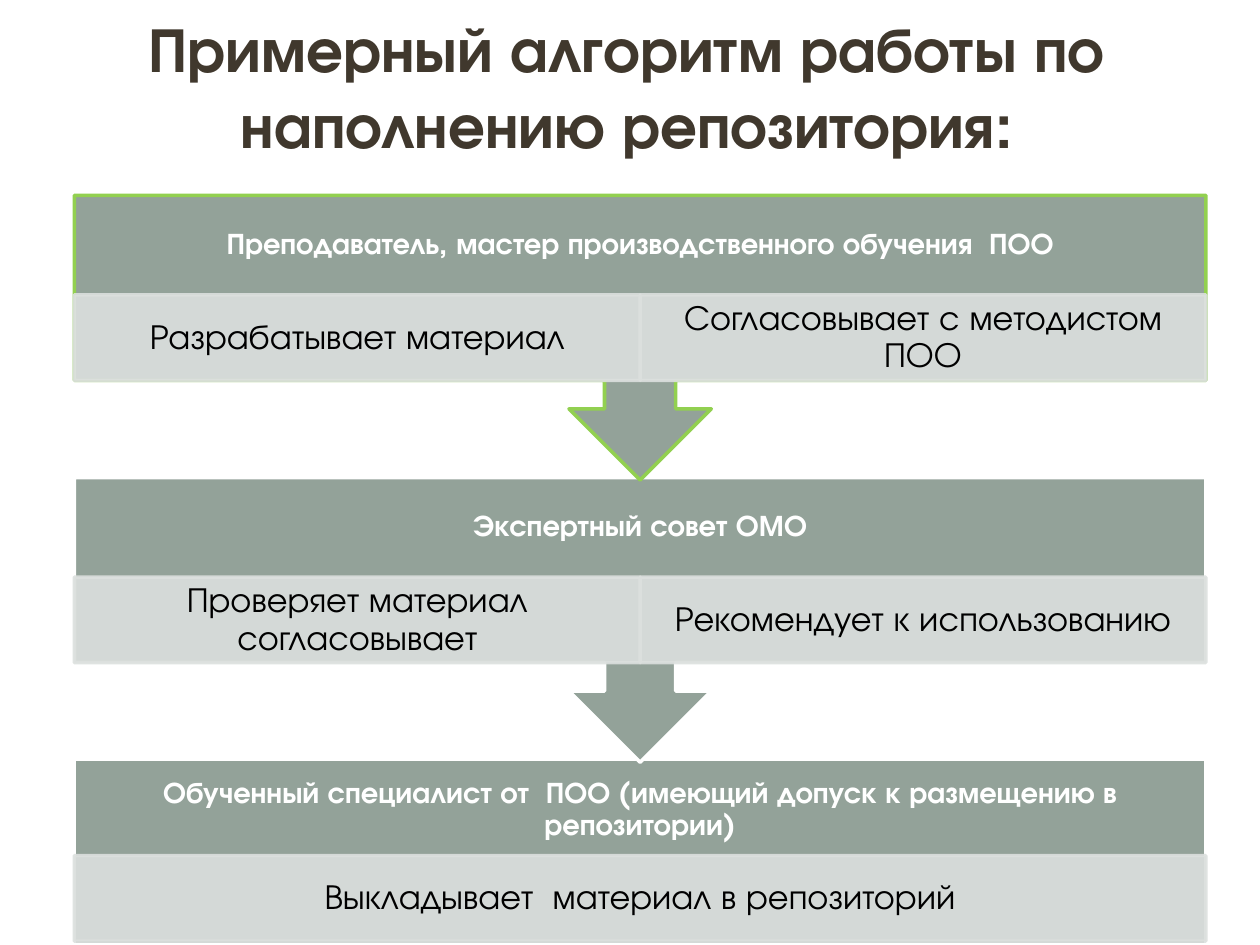
from lxml.etree import SubElement
from pptx import Presentation
from pptx.dml.color import RGBColor
from pptx.enum.shapes import MSO_SHAPE
from pptx.enum.text import MSO_ANCHOR, PP_ALIGN
from pptx.oxml.ns import qn
from pptx.util import Inches, Pt

# Content
TITLE = "Примерный алгоритм работы по наполнению репозитория:"
STEPS = [
    ("Преподаватель, мастер производственного обучения  ПОО",
     ["Разрабатывает материал", "Согласовывает с методистом ПОО"], "green"),
    ("Экспертный совет ОМО",
     ["Проверяет материал согласовывает", "Рекомендует к использованию"], "white"),
    ("Обученный специалист от  ПОО (имеющий допуск к размещению в репозитории)",
     ["Выкладывает  материал в репозиторий"], "white"),
]
COLORS = {"title": "40382D", "step": "93A299", "action": "DCE0DE",
          "green": "92D050", "white": "FFFFFF", "black": "000000"}
FONT = "TeX Gyre Adventor"

# Layout in inches
LEFT, TOP, WIDTH = 0.59, 1.55, 8.98
PITCH = 2.24
CALLOUT_HEIGHT, LAST_HEIGHT = 2.26, 1.47
HEADER_HEIGHT, ACTION_HEIGHT = 0.79, 0.68
LAST_ACTION_OFFSET = 0.76


def color(name):
    return RGBColor.from_string(COLORS[name])


def set_text(shape, text, size, color_name, bold=False, margins=(0.1, 0.05), spacing=None):
    frame = shape.text_frame
    frame.word_wrap = True
    frame.margin_left = frame.margin_right = Inches(margins[0])
    frame.margin_top = frame.margin_bottom = Inches(margins[1])
    frame.text = text
    paragraph = frame.paragraphs[0]
    paragraph.alignment = PP_ALIGN.CENTER
    if spacing:
        frame.vertical_anchor = MSO_ANCHOR.MIDDLE
        paragraph.line_spacing = spacing
    font = paragraph.runs[0].font
    font.name, font.size, font.bold = FONT, Pt(size), bold
    font.color.rgb = color(color_name)


def add_block(slide, kind, box, fill, line, opacity=None):
    shape = slide.shapes.add_shape(kind, *map(Inches, box))
    shape.shadow.inherit = False
    shape.fill.solid()
    shape.fill.fore_color.rgb = color(fill)
    shape.line.color.rgb = color(line)
    shape.line.width = Pt(2)
    if opacity:
        for tint in shape._element.spPr.iter(qn("a:srgbClr")):
            SubElement(tint, qn("a:alpha")).set("val", str(opacity * 1000))
    return shape


def add_step(slide, index, header, actions, outline):
    top = TOP + index * PITCH
    is_last = index == len(STEPS) - 1

    # Step body: a callout pointing down, or a plain box at the end
    kind = MSO_SHAPE.RECTANGLE if is_last else MSO_SHAPE.UP_ARROW_CALLOUT
    height = LAST_HEIGHT if is_last else CALLOUT_HEIGHT
    body = add_block(slide, kind, (LEFT, top, WIDTH, height), "step", outline)
    body.rotation = 0 if is_last else 180

    # Header text
    header_box = slide.shapes.add_textbox(
        Inches(LEFT), Inches(top), Inches(WIDTH), Inches(HEADER_HEIGHT))
    set_text(header_box, header, 17, "white", True, (0.13, 0.13), 0.9)

    # Actions share the width equally
    action_top = top + (LAST_ACTION_OFFSET if is_last else HEADER_HEIGHT)
    action_width = WIDTH / len(actions)
    for column, action in enumerate(actions):
        box = (LEFT + column * action_width, action_top, action_width, ACTION_HEIGHT)
        cell = add_block(slide, MSO_SHAPE.RECTANGLE, box, "action", "action", 90)
        set_text(cell, action, 20, "black", False, (0.16, 0.03), 0.9)


def main():
    presentation = Presentation()
    presentation.slide_width, presentation.slide_height = Inches(10), Inches(7.5)
    slide = presentation.slides.add_slide(presentation.slide_layouts[6])

    # Later steps lie behind, so each arrow tip overlaps the next box
    for index, step in reversed(list(enumerate(STEPS))):
        add_step(slide, index, *step)

    # Title
    title = slide.shapes.add_textbox(Inches(-0.02), Inches(0.03), Inches(9.99), Inches(1.31))
    set_text(title, TITLE, 36, "title", True)

    presentation.save("out.pptx")


if __name__ == "__main__":
    main()
